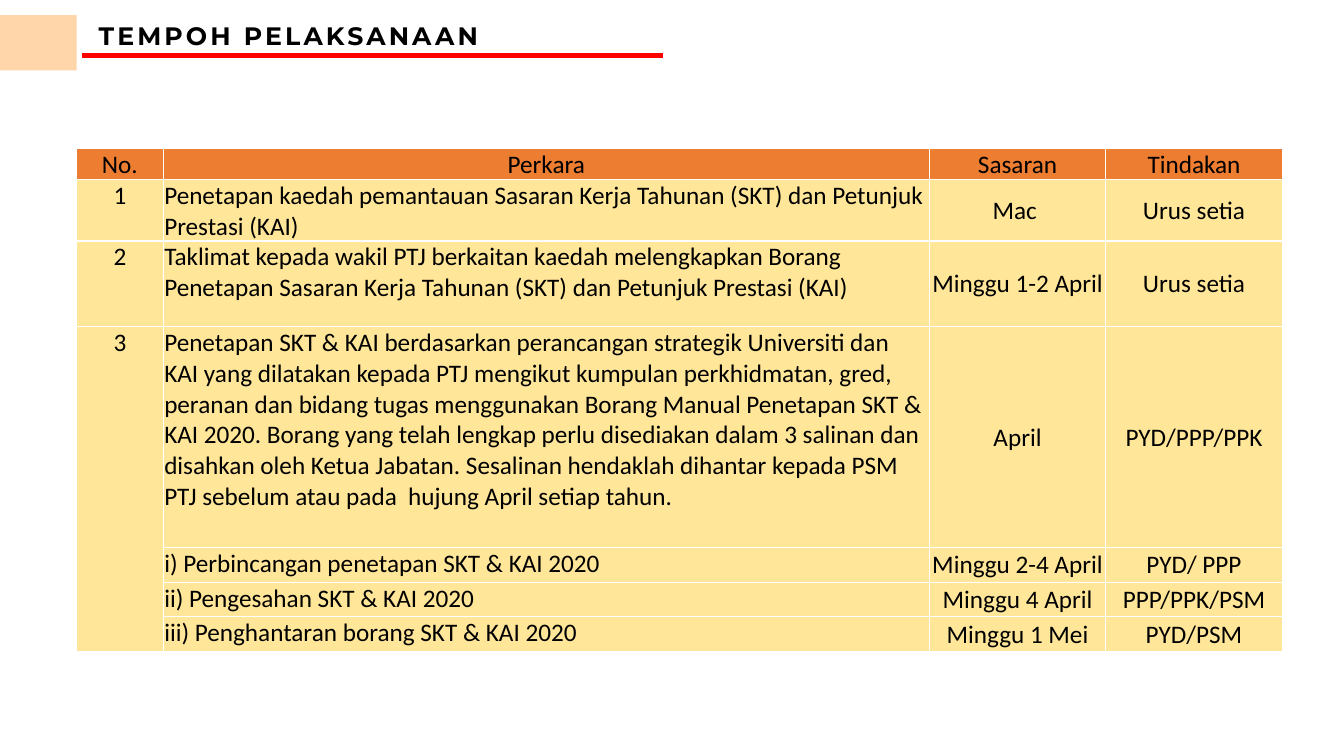
import pptx
import pptx.dml.color
import pptx.enum.shapes
import pptx.enum.text
import pptx.oxml
import pptx.oxml.ns
import pptx.util
from lxml import etree

RGBColor = pptx.dml.color.RGBColor
BLACK = RGBColor(0x00, 0x00, 0x00)
WHITE = RGBColor(0xFF, 0xFF, 0xFF)
RED = RGBColor(0xFF, 0x00, 0x00)
PEACH = RGBColor(0xFF, 0xD6, 0xA9)
ORANGE = RGBColor(0xED, 0x7D, 0x31)
CREAM = RGBColor(0xFF, 0xE6, 0x99)

CENTER = pptx.enum.text.PP_ALIGN.CENTER
LEFT = pptx.enum.text.PP_ALIGN.LEFT
TOP = pptx.enum.text.MSO_ANCHOR.TOP
MIDDLE = pptx.enum.text.MSO_ANCHOR.MIDDLE
BOTTOM = pptx.enum.text.MSO_ANCHOR.BOTTOM

HEADING_FONT = {"name": "Montserrat", "size": pptx.util.Pt(18), "bold": True}
TABLE_FONT = {"name": "Calibri", "size": pptx.util.Pt(18), "bold": False}
CELL_MARGINS = {
    "margin_left": pptx.util.Inches(0.01),
    "margin_right": pptx.util.Inches(0.01),
    "margin_top": pptx.util.Inches(0.01),
    "margin_bottom": 0,
}

# Table content: number, matter, target, action
HEADER = ["No.", "Perkara", "Sasaran", "Tindakan"]
SCHEDULE = [
    ["1", "Penetapan kaedah pemantauan Sasaran Kerja Tahunan (SKT) dan Petunjuk "
          "Prestasi (KAI)", "Mac ", "Urus setia"],
    ["2", "Taklimat kepada wakil PTJ berkaitan kaedah melengkapkan Borang Penetapan "
          "Sasaran Kerja Tahunan (SKT) dan Petunjuk Prestasi (KAI)",
     "Minggu 1-2 April ", "Urus setia"],
    ["3", "Penetapan SKT & KAI berdasarkan perancangan strategik Universiti dan KAI "
          "yang dilatakan kepada PTJ mengikut kumpulan perkhidmatan, gred, peranan "
          "dan bidang tugas menggunakan Borang Manual Penetapan SKT & KAI 2020. "
          "Borang yang telah lengkap perlu disediakan dalam 3 salinan dan disahkan "
          "oleh Ketua Jabatan. Sesalinan hendaklah dihantar kepada PSM PTJ sebelum "
          "atau pada  hujung April setiap tahun.", "April", "PYD/PPP/PPK"],
    ["", "i) Perbincangan penetapan SKT & KAI 2020", "Minggu 2-4 April", "PYD/ PPP"],
    ["", "ii) Pengesahan SKT & KAI 2020", "Minggu 4 April", "PPP/PPK/PSM"],
    ["", "iii) Penghantaran borang SKT & KAI 2020", "Minggu 1 Mei", "PYD/PSM"],
]


def apply_format(target, values):
    for name, value in values.items():
        setattr(target, name, value)


class SlideBuilder:
    """Places elements on a grid of 100 columns by 100 rows."""

    def __init__(self, presentation):
        self.column = presentation.slide_width / 100
        self.row = presentation.slide_height / 100
        self.slide = presentation.slides.add_slide(presentation.slide_layouts[6])
        self.shapes = self.slide.shapes

    def place(self, left, top, width, height):
        return (round(left * self.column), round(top * self.row),
                round(width * self.column), round(height * self.row))

    def add_text(self, paragraph, text, font, alignment=LEFT):
        paragraph.alignment = alignment
        run = paragraph.add_run()
        run.text = text
        apply_format(run.font, font)
        run.font.color.rgb = BLACK
        return run

    def heading(self, text, box, spacing):
        frame = self.shapes.add_textbox(*self.place(*box)).text_frame
        frame.word_wrap = True
        run = self.add_text(frame.paragraphs[0], text, HEADING_FONT)
        run.font._element.set("spc", str(round(spacing * 100)))

    def block(self, box, color):
        shape = self.shapes.add_shape(
            pptx.enum.shapes.MSO_SHAPE.RECTANGLE, *self.place(*box))
        shape.shadow.inherit = False
        shape.fill.solid()
        shape.fill.fore_color.rgb = color
        shape.line.fill.background()

    def rule(self, start, end, top, color, weight):
        left, y, right, _ = self.place(start, top, end, 0)
        line = self.shapes.add_connector(
            pptx.enum.shapes.MSO_CONNECTOR.STRAIGHT, left, y, right, y)
        line.line.color.rgb = color
        line.line.width = pptx.util.Pt(weight)
        etree.SubElement(line._element.spPr, pptx.oxml.ns.qn("a:effectLst"))

    def cell(self, cell, text, fill, alignment, anchor):
        apply_format(cell, {**CELL_MARGINS, "vertical_anchor": anchor})
        self.add_text(cell.text_frame.paragraphs[0], text, TABLE_FONT, alignment)
        properties = cell._tc.get_or_add_tcPr()
        for side in ("lnL", "lnR", "lnT", "lnB"):
            properties.append(pptx.oxml.parse_xml(
                f'<a:{side} {pptx.oxml.ns.nsdecls("a")} w="12700"><a:solidFill>'
                f'<a:srgbClr val="{WHITE}"/></a:solidFill></a:{side}>'))
        cell.fill.solid()
        cell.fill.fore_color.rgb = fill

    def table(self, left, top, widths, heights, header, body):
        box = self.place(left, top, sum(widths), sum(heights))
        table = self.shapes.add_table(len(heights), len(widths), *box).table
        apply_format(table, {"first_row": False, "horz_banding": False})
        for column, width in zip(table.columns, widths):
            column.width = round(width * self.column)
        for row, height in zip(table.rows, heights):
            row.height = round(height * self.row)

        header_anchors = [BOTTOM, BOTTOM, MIDDLE, MIDDLE]
        body_anchors = [TOP, TOP, MIDDLE, MIDDLE]
        body_alignments = [CENTER, LEFT, CENTER, CENTER]
        for index, text in enumerate(header):
            self.cell(table.cell(0, index), text, ORANGE, CENTER, header_anchors[index])
        for row_index, texts in enumerate(body, start=1):
            for index, text in enumerate(texts):
                self.cell(table.cell(row_index, index), text, CREAM,
                          body_alignments[index], body_anchors[index])
        return table


def main():
    presentation = pptx.Presentation()
    presentation.slide_width = pptx.util.Inches(13.33)
    presentation.slide_height = pptx.util.Inches(7.5)
    builder = SlideBuilder(presentation)

    # Heading with its underline and side block
    builder.heading("TEMPOH PELAKSANAAN", (6.6, 2, 49, 5.33), spacing=2.2)
    builder.rule(6.1, 49.3, 7.33, RED, weight=3)
    builder.block((0, 2, 5.7, 7.33), PEACH)

    # Schedule table; item 3 spans its three sub-steps
    widths = [6.45, 57, 13.13, 13.13]
    heights = [4.07, 8.13, 11.33, 29.2] + [4.6] * 3
    table = builder.table(5.7, 19.6, widths, heights, HEADER, SCHEDULE)
    table.cell(3, 0).merge(table.cell(6, 0))

    presentation.save("out.pptx")


if __name__ == "__main__":
    main()
